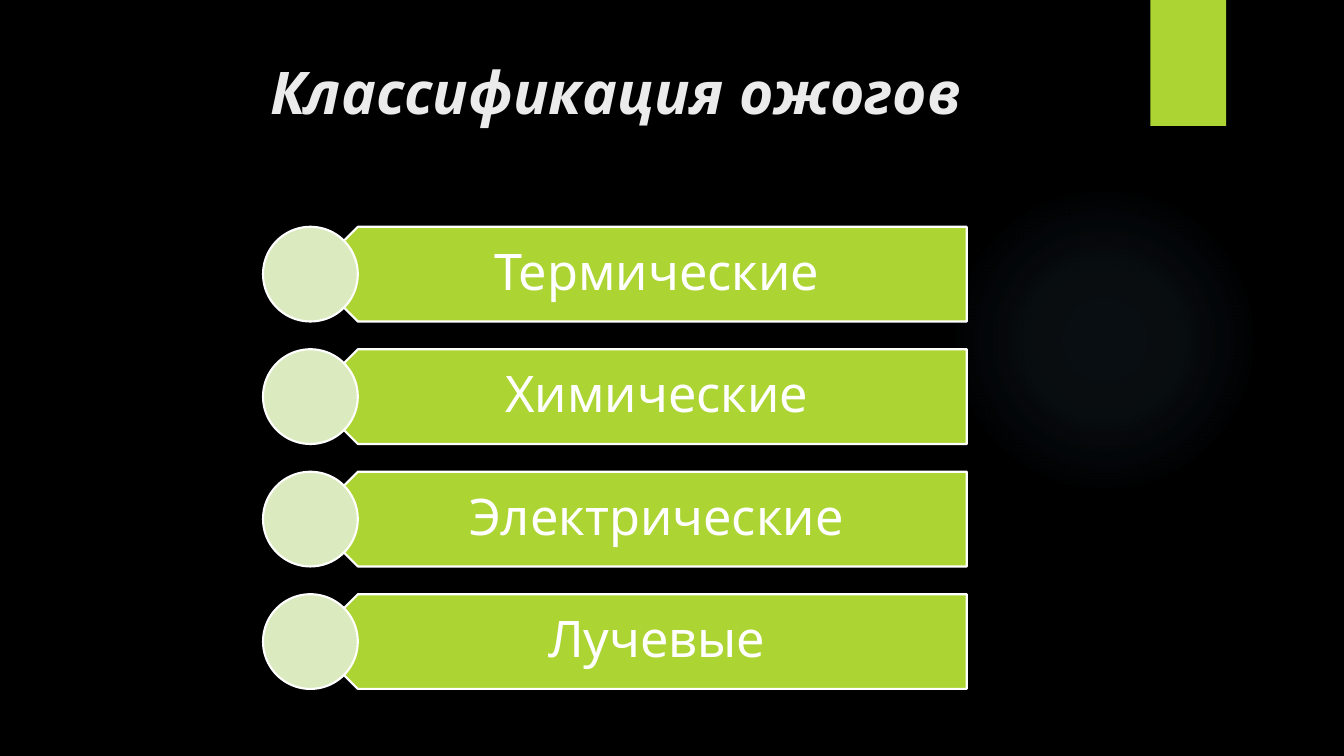
from dataclasses import dataclass

from pptx import Presentation
from pptx.dml.color import RGBColor
from pptx.enum.shapes import MSO_SHAPE
from pptx.enum.text import MSO_ANCHOR, PP_ALIGN
from pptx.oxml import parse_xml
from pptx.oxml.ns import nsdecls, qn
from pptx.util import Inches, Pt


@dataclass(frozen=True)
class Theme:
    font: str = "League Spartan"
    background: str = "000000"
    accent: str = "ACD433"
    pale: str = "DBEBBF"
    outline: str = "FFFFFF"
    heading: str = "EBEBEB"
    label: str = "FFFFFF"
    glow: str = "7AC4F0"
    heading_size: float = 42
    label_size: float = 36
    outline_width: float = 1.5


class SlideBuilder:
    """Draws styled elements placed in percent of the slide's width and height."""

    def __init__(self, deck, theme):
        self.deck = deck
        self.theme = theme
        self.slide = deck.slides.add_slide(deck.slide_layouts[6])
        backdrop = self.slide.background.fill
        backdrop.solid()
        backdrop.fore_color.rgb = RGBColor.from_string(theme.background)

    def place(self, left, top, width, height):
        across, down = self.deck.slide_width / 100, self.deck.slide_height / 100
        return [round(length) for length in
                (left * across, top * down, width * across, height * down)]

    def shape(self, preset, area, color, outlined=False):
        shape = self.slide.shapes.add_shape(preset, *self.place(*area))
        shape.shadow.inherit = False
        shape.fill.solid()
        shape.fill.fore_color.rgb = RGBColor.from_string(color)
        if outlined:
            shape.line.color.rgb = RGBColor.from_string(self.theme.outline)
            shape.line.width = Pt(self.theme.outline_width)
        else:
            shape.line.fill.background()
        return shape

    def glow(self, area, stops):
        halo = self.shape(MSO_SHAPE.OVAL, area, self.theme.glow)
        stop_xml = "".join(
            f'<a:gs pos="{position * 1000}"><a:srgbClr val="{self.theme.glow}">'
            f'<a:alpha val="{opacity * 1000}"/></a:srgbClr></a:gs>'
            for position, opacity in stops)
        gradient = parse_xml(
            f'<a:gradFill {nsdecls("a")}><a:gsLst>{stop_xml}</a:gsLst>'
            '<a:path path="circle"><a:fillToRect l="50000" t="50000" '
            'r="50000" b="50000"/></a:path></a:gradFill>')
        properties = halo.element.spPr
        properties.replace(properties.find(qn("a:solidFill")), gradient)

    def text(self, words, area, size, color, anchor=MSO_ANCHOR.TOP,
             insets=(0.1, 0.05, 0.1, 0.05), spacing=1.0, emphasis=False):
        frame = self.slide.shapes.add_textbox(*self.place(*area)).text_frame
        frame.word_wrap = True
        frame.vertical_anchor = anchor
        (frame.margin_left, frame.margin_top,
         frame.margin_right, frame.margin_bottom) = map(Inches, insets)
        frame.text = words
        paragraph = frame.paragraphs[0]
        paragraph.alignment = PP_ALIGN.CENTER
        paragraph.line_spacing = spacing
        font = paragraph.runs[0].font
        font.name = self.theme.font
        font.size = Pt(size)
        font.bold = font.italic = emphasis
        font.color.rgb = RGBColor.from_string(color)

    def burn_type(self, name, top, height):
        theme = self.theme
        arrow = self.shape(MSO_SHAPE.PENTAGON, (23.1, top, 48.83, height),
                           theme.accent, outlined=True)
        arrow.rotation = 180
        self.text(name, (24.85, top, 47.05, height), theme.label_size, theme.label,
                  MSO_ANCHOR.MIDDLE, (0.41, 0.15, 0.28, 0.15), 0.9)
        self.shape(MSO_SHAPE.OVAL, (19.57, top, 7.05, height),
                   theme.pale, outlined=True)


def main():
    deck = Presentation()
    deck.slide_width, deck.slide_height = Inches(13.33), Inches(7.5)
    theme = Theme()
    builder = SlideBuilder(deck, theme)

    builder.glow((70.59, 24.4, 23.11, 41.07), [(0, 7), (36, 6), (69, 0)])
    builder.shape(MSO_SHAPE.RECTANGLE, (85.6, 0, 5.63, 16.67), theme.accent)
    builder.text("Классификация ожогов", (7.2, 6.67, 77.2, 20.4),
                 theme.heading_size, theme.heading, emphasis=True)

    burn_types = ["Термические", "Химические", "Электрические", "Лучевые"]
    first_top, pitch, height = 30, 16.2, 12.53
    for row, name in enumerate(burn_types):
        builder.burn_type(name, first_top + row * pitch, height)

    deck.save("out.pptx")


if __name__ == "__main__":
    main()
